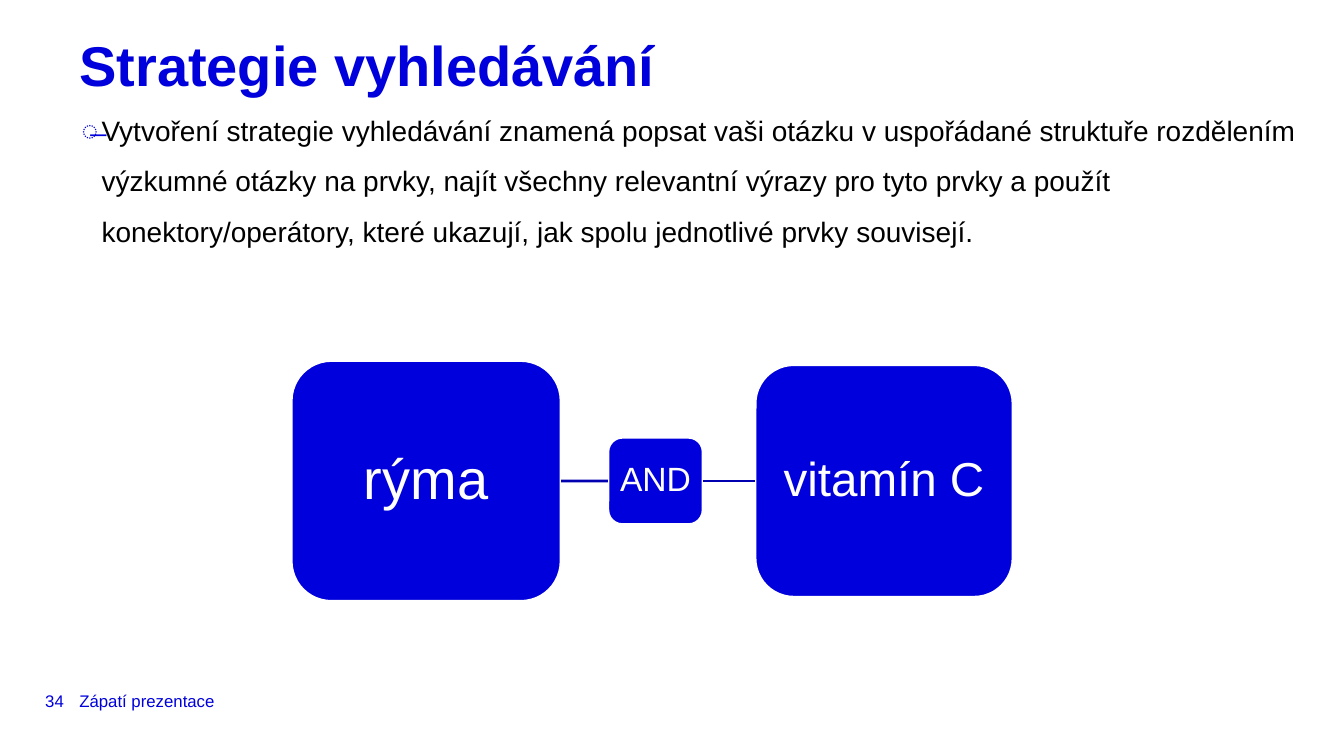
from dataclasses import dataclass
from itertools import pairwise

from lxml.etree import SubElement
from pptx import Presentation
from pptx.dml.color import RGBColor
from pptx.enum.shapes import MSO_CONNECTOR as Connector, MSO_SHAPE as Shape
from pptx.enum.text import MSO_ANCHOR as Anchor, MSO_AUTO_SIZE as AutoSize, PP_ALIGN as Align
from pptx.oxml.ns import qn
from pptx.util import Cm, Pt

TITLE = "Strategie vyhledávání"
EXPLANATION = (
    "Vytvoření strategie vyhledávání znamená popsat vaši otázku v uspořádané "
    "struktuře rozdělením výzkumné otázky na prvky, najít všechny relevantní "
    "výrazy pro tyto prvky a použít konektory/operátory, které ukazují, jak "
    "spolu jednotlivé prvky souvisejí."
)
BULLET = "̶"
FOOTER = "Zápatí prezentace"
PAGE_NUMBER = "34"
TERMS = [
    {"label": "rýma", "left": 7.34, "width": 6.8, "height": 6.07, "size": 40},
    {"label": "AND", "left": 15.32, "width": 2.4, "height": 2.2, "size": 24},
    {"label": "vitamín C", "left": 19.03, "width": 6.5, "height": 5.86, "size": 34},
]
TERMS_MIDDLE = 12.12


@dataclass(frozen=True)
class Theme:
    font: str = "Arial"
    blue: RGBColor = RGBColor(0x00, 0x00, 0xDC)
    link: RGBColor = RGBColor(0x00, 0x00, 0xB0)
    white: RGBColor = RGBColor(0xFF, 0xFF, 0xFF)
    black: RGBColor = RGBColor(0x00, 0x00, 0x00)
    title: int = 40
    body: int = 20
    footer: int = 12
    line: int = 2


THEME = Theme()


def write(holder, text, size, color, anchor=Anchor.TOP, wrap=True, bold=False):
    frame = holder.text_frame
    frame.auto_size = AutoSize.NONE
    frame.word_wrap = wrap
    frame.vertical_anchor = anchor
    frame.margin_left = frame.margin_right = 0
    frame.margin_top = frame.margin_bottom = 0
    paragraph = frame.paragraphs[0]
    run = paragraph.add_run()
    run.text = text
    run.font.name = THEME.font
    run.font.size = Pt(size)
    run.font.bold = bold
    run.font.color.rgb = color
    return paragraph


def add_text(slide, box, *args, **options):
    return write(slide.shapes.add_textbox(*map(Cm, box)), *args, **options)


def add_bullet(paragraph):
    props = paragraph._p.get_or_add_pPr()
    props.set("marL", str(Cm(0.71)))
    props.set("indent", str(Cm(-0.5)))
    color = SubElement(props, qn("a:buClr"))
    SubElement(color, qn("a:srgbClr"), val=str(THEME.blue))
    SubElement(props, qn("a:buFont"), typeface=THEME.font)
    SubElement(props, qn("a:buChar"), char=BULLET)


def add_term(slide, term):
    top = TERMS_MIDDLE - term["height"] / 2
    box = (term["left"], top, term["width"], term["height"])
    tile = slide.shapes.add_shape(Shape.ROUNDED_RECTANGLE, *map(Cm, box))
    tile.shadow.inherit = False
    tile.fill.solid()
    tile.fill.fore_color.rgb = THEME.blue
    tile.line.color.rgb = THEME.white
    tile.line.width = Pt(THEME.line)
    label = write(tile, term["label"], term["size"], THEME.white, Anchor.MIDDLE)
    label.alignment = Align.CENTER
    label.line_spacing = 0.9
    return tile


def link_terms(slide, first, second):
    link = slide.shapes.add_connector(Connector.STRAIGHT, 0, 0, 0, 0)
    link.begin_connect(first, 3)
    link.end_connect(second, 1)
    link.line.color.rgb = THEME.link
    link.line.width = Pt(THEME.line)
    SubElement(link._element.spPr, qn("a:effectLst"))


def main():
    deck = Presentation()
    deck.slide_width, deck.slide_height = Cm(33.87), Cm(19.05)
    slide = deck.slides.add_slide(deck.slide_layouts[5])

    title = slide.shapes.title
    title.left, title.top, title.width, title.height = map(Cm, (2, 1.04, 29.87, 1.24))
    heading = write(title, TITLE, THEME.title, THEME.blue, bold=True)
    heading.alignment = Align.LEFT
    heading.line_spacing = Pt(40)

    explanation = add_text(slide, (1.85, 2.44, 31.14, 4.5), EXPLANATION, THEME.body, THEME.black)
    explanation.line_spacing = Pt(36)
    add_bullet(explanation)

    tiles = [add_term(slide, term) for term in TERMS]
    for first, second in pairwise(tiles):
        link_terms(slide, first, second)

    add_text(slide, (2, 17.3, 22, 0.7), FOOTER, THEME.footer, THEME.blue, Anchor.MIDDLE)
    add_text(slide, (1.14, 17.3, 0.7, 0.7), PAGE_NUMBER, THEME.footer, THEME.blue,
             Anchor.MIDDLE, wrap=False)

    deck.save("out.pptx")


if __name__ == "__main__":
    main()
